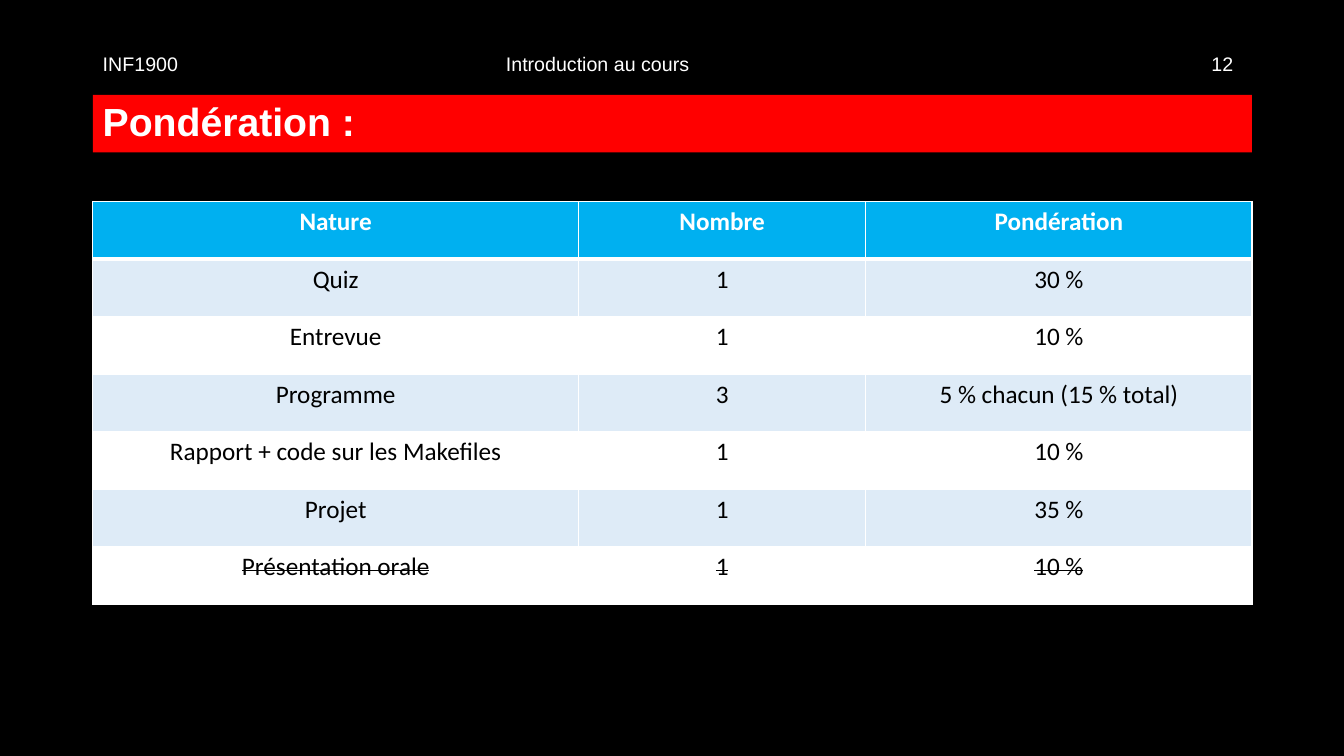
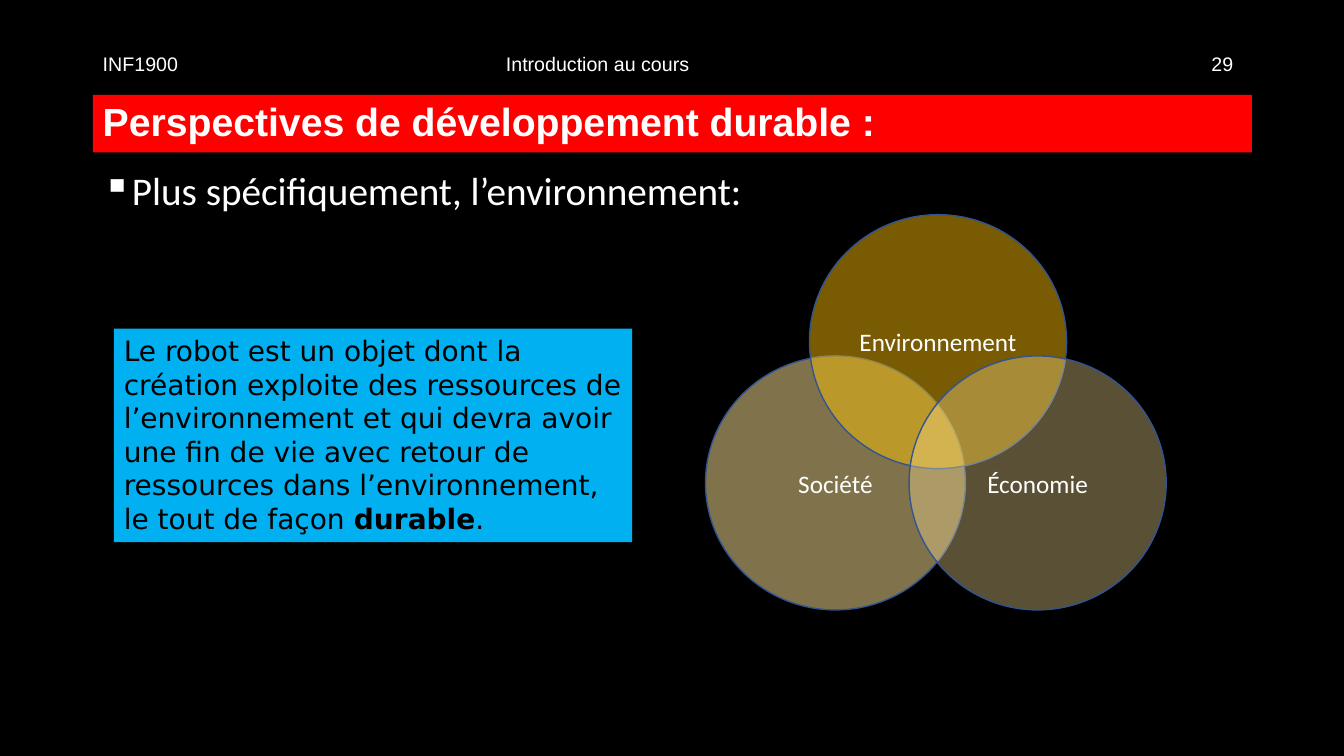
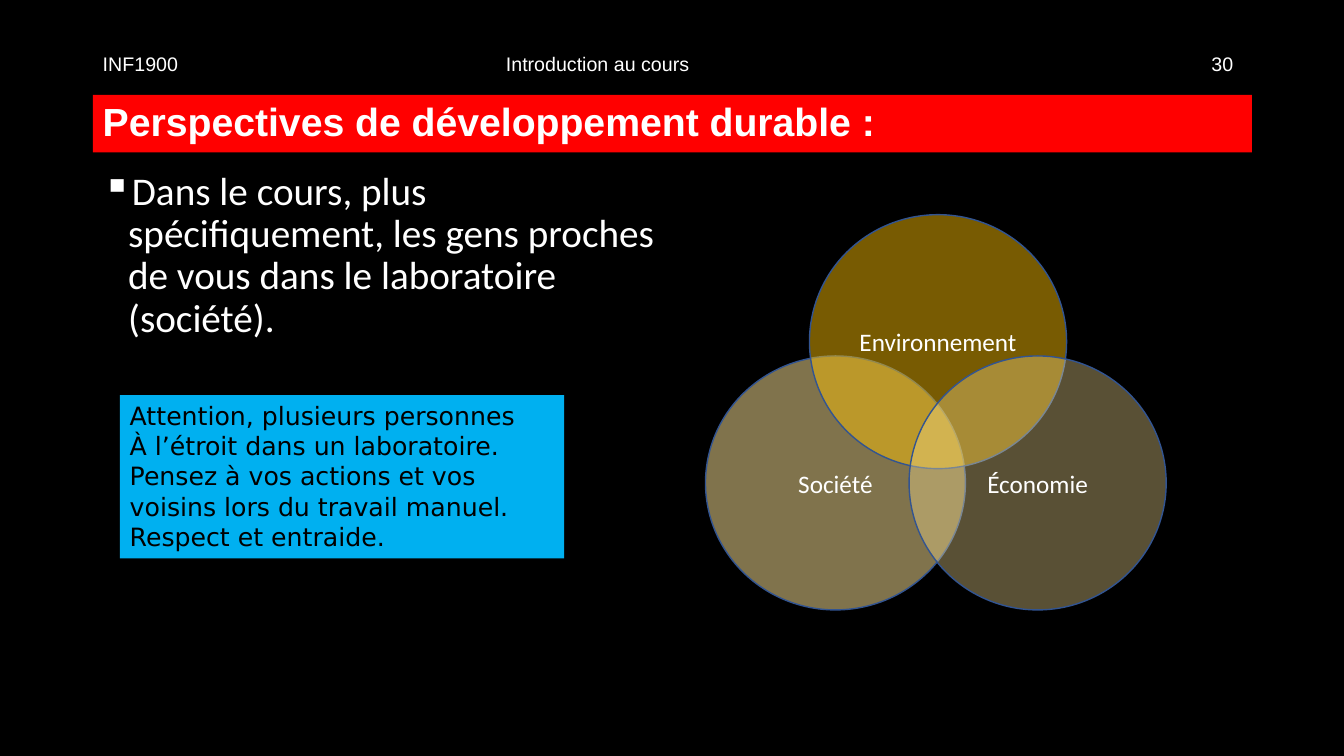
import pptx
import pptx.util
import pptx.dml.color
import pptx.enum.shapes
import pptx.enum.text
from lxml import etree
from pptx.oxml.ns import qn
from pptx.util import Cm

RGBColor = pptx.dml.color.RGBColor
ALIGN = pptx.enum.text.PP_ALIGN
ANCHOR = pptx.enum.text.MSO_ANCHOR
SHAPE = pptx.enum.shapes.MSO_SHAPE

BLACK = RGBColor(0x00, 0x00, 0x00)
WHITE = RGBColor(0xFF, 0xFF, 0xFF)
RED = RGBColor(0xFF, 0x00, 0x00)
BLUE = RGBColor(0x00, 0xB0, 0xF0)
PALE_BLUE = RGBColor(0xDE, 0xEB, 0xF7)
OUTLINE = RGBColor(0x32, 0x54, 0x91)
GOLD = RGBColor(0xFF, 0xC3, 0x05)
PALE_GOLD = RGBColor(0xFF, 0xE6, 0x99)

LEFT, WIDTH = Cm(2.34), Cm(29.21)
COURSE, LECTURE = "INF1900", "Introduction au cours"
HEADER_TABS = (Cm(10.16), Cm(27.94))
DURABLE = "Perspectives de développement durable :"

GRADES = [
    ("Nature", "Nombre", "Pondération"),
    ("Quiz", "1", "30 %"),
    ("Entrevue", "1", "10 %"),
    ("Programme", "3", "5 % chacun (15 % total)"),
    ("Rapport + code sur les Makefiles", "1", "10 %"),
    ("Projet", "1", "35 %"),
    ("Présentation orale", "1", "10 %"),
]
CIRCLES = [
    ("Société", Cm(17.78), Cm(8.97), Cm(6.55), PALE_GOLD, 50),
    ("Environnement", Cm(20.4), Cm(5.41), Cm(6.48), GOLD, 47),
    ("Économie", Cm(22.91), Cm(8.97), Cm(6.48), PALE_GOLD, 35),
]


def add_run(p, text, size=18, font="Calibri", color=WHITE, bold=False, strike=False):
    r = p.add_run()
    r.text = text
    r.font.size = pptx.util.Pt(size)
    r.font.name = font
    r.font.bold = bold
    r.font.color.rgb = color
    if strike:
        r.font._element.set("strike", "sngStrike")


def write(tf, lines, align=ALIGN.LEFT, anchor=ANCHOR.TOP, spacing=None, **fmt):
    tf.word_wrap = True
    tf.vertical_anchor = anchor
    for i, line in enumerate(lines):
        p = tf.paragraphs[0] if i == 0 else tf.add_paragraph()
        p.alignment = align
        if spacing:
            p.line_spacing = spacing
        add_run(p, line, **fmt)


def add_block(s, kind, left, top, width, height, fill, line=None, opacity=None):
    sp = s.shapes.add_shape(kind, left, top, width, height)
    sp.shadow.inherit = False
    sp.fill.solid()
    sp.fill.fore_color.rgb = fill
    if opacity:
        color = sp._element.spPr.find(qn("a:solidFill")).find(qn("a:srgbClr"))
        etree.SubElement(color, qn("a:alpha"), val=str(opacity * 1000))
    if line:
        sp.line.color.rgb = line
        sp.line.width = pptx.util.Pt(1)
    else:
        sp.line.fill.background()
    return sp.text_frame


def add_slide(prs, title, number):
    s = prs.slides.add_slide(prs.slide_layouts[6])
    tf = add_block(s, SHAPE.RECTANGLE, LEFT, Cm(2.39), WIDTH, Cm(1.45), RED)
    write(tf, [title], anchor=ANCHOR.MIDDLE, spacing=0.9, size=28, font="Arial", bold=True)
    tf = s.shapes.add_textbox(LEFT, Cm(1.19), WIDTH, Cm(0.86)).text_frame
    tabs = etree.SubElement(tf.paragraphs[0]._p.get_or_add_pPr(), qn("a:tabLst"))
    for pos in HEADER_TABS:
        etree.SubElement(tabs, qn("a:tab"), pos=str(pos), algn="l")
    write(tf, [f"{COURSE}\t{LECTURE}\t{number}"], size=14, font="Arial")
    return s


def add_bullet(s, text, width, height):
    tf = s.shapes.add_textbox(LEFT, Cm(4.19), width, height).text_frame
    pPr = tf.paragraphs[0]._p.get_or_add_pPr()
    indent = Cm(0.64)
    pPr.set("marL", str(indent))
    pPr.set("indent", str(-indent))
    etree.SubElement(pPr, qn("a:buChar"), char="▪")
    write(tf, [text], spacing=0.9, size=28)


def add_callout(s, lines, left, top, width, height, size):
    tf = add_block(s, SHAPE.RECTANGLE, left, top, width, height, BLUE)
    fmt = dict(size=size, font="DejaVu Sans", color=BLACK)
    write(tf, lines, **fmt)
    return tf, fmt


def add_venn(s):
    for label, left, top, width, fill, opacity in CIRCLES:
        tf = add_block(s, SHAPE.OVAL, left, top, width, Cm(6.4), fill, OUTLINE, opacity)
        write(tf, [label], align=ALIGN.CENTER, anchor=ANCHOR.MIDDLE)


def add_borders(cell, header, below_header):
    tcPr = cell._tc.get_or_add_tcPr()
    for side in ("lnL", "lnR", "lnT", "lnB"):
        thick = (header and side == "lnB") or (below_header and side == "lnT")
        ln = etree.SubElement(tcPr, qn("a:" + side), w=str(pptx.util.Pt(3 if thick else 1)))
        fill = etree.SubElement(ln, qn("a:solidFill"))
        etree.SubElement(fill, qn("a:srgbClr"), val=str(WHITE))


def add_grades(s):
    height = Cm(1.45)
    table = s.shapes.add_table(len(GRADES), 3, LEFT, Cm(5.08), WIDTH, height * len(GRADES)).table
    for col, width in zip(table.columns, (12.24, 7.24, 9.73)):
        col.width = Cm(width)
    for i, row in enumerate(GRADES):
        table.rows[i].height = height
        header = i == 0
        for j, text in enumerate(row):
            cell = table.cell(i, j)
            add_borders(cell, header, i == 1)
            cell.fill.solid()
            cell.fill.fore_color.rgb = BLUE if header else PALE_BLUE if i % 2 else WHITE
            p = cell.text_frame.paragraphs[0]
            p.alignment = ALIGN.CENTER
            add_run(p, text, color=WHITE if header else BLACK, bold=header,
                    strike=i == len(GRADES) - 1)


def main():
    prs = pptx.Presentation()
    prs.slide_width, prs.slide_height = Cm(33.87), Cm(19.05)
    background = prs.slide_master.background.fill
    background.solid()
    background.fore_color.rgb = BLACK

    s = add_slide(prs, "Pondération :", 12)
    add_grades(s)

    s = add_slide(prs, DURABLE, 29)
    add_bullet(s, "Plus spécifiquement, l’environnement:", WIDTH, Cm(13.67))
    add_venn(s)
    tf, fmt = add_callout(s, [
        "Le robot est un objet dont la création exploite des ressources de",
        "l’environnement et qui devra avoir",
        "une fin de vie avec retour de",
        "ressources dans l’environnement,",
        "le tout de façon ",
    ], Cm(2.87), Cm(8.28), Cm(13.06), Cm(5.38), 20)
    add_run(tf.paragraphs[-1], "durable", bold=True, **fmt)
    add_run(tf.paragraphs[-1], ".", **fmt)

    s = add_slide(prs, DURABLE, 30)
    add_bullet(s, "Dans le cours, plus spécifiquement, les gens proches de vous "
               "dans le laboratoire (société).", Cm(15.11), Cm(4.75))
    add_venn(s)
    add_callout(s, [
        "Attention, plusieurs personnes",
        "À l’étroit dans un laboratoire.",
        "Pensez à vos actions et vos",
        "voisins lors du travail manuel.",
        "Respect et entraide.",
    ], Cm(3.02), Cm(9.96), Cm(11.2), Cm(4.11), 18)

    prs.save("out.pptx")


if __name__ == "__main__":
    main()
